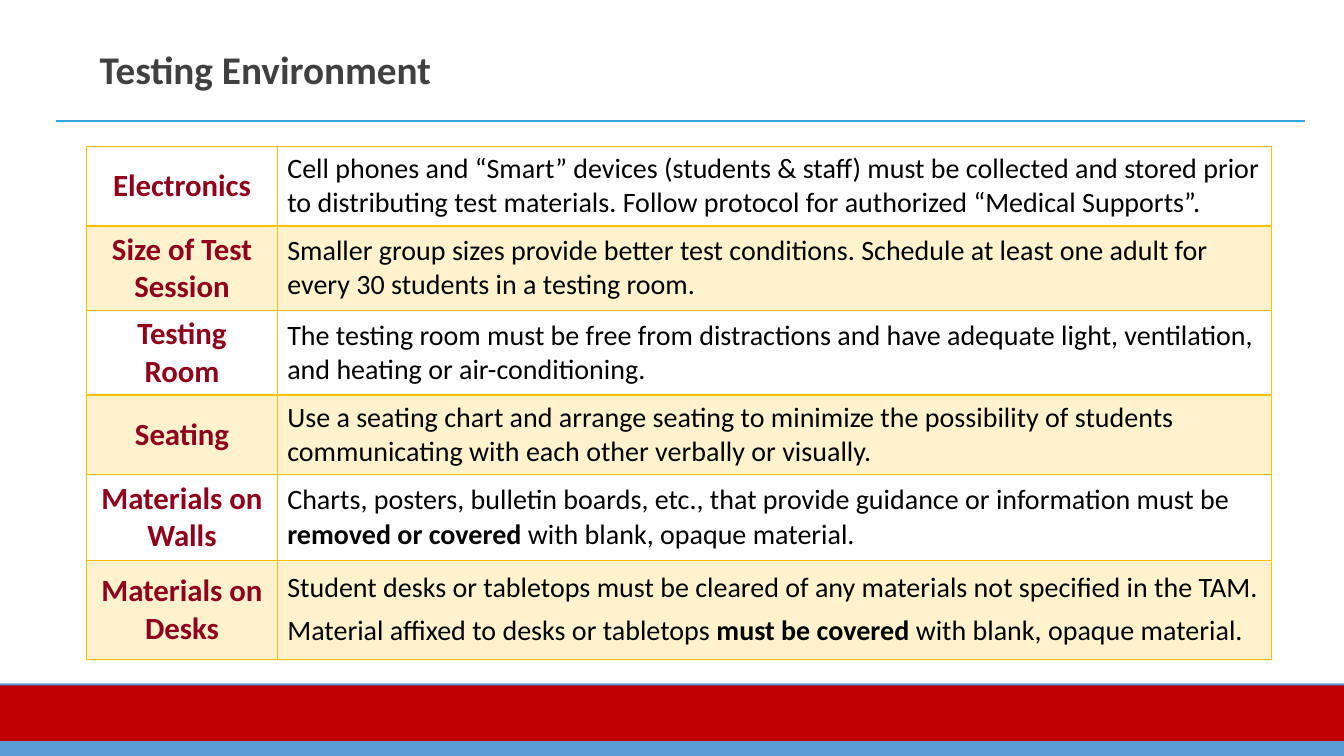
from lxml.etree import SubElement
from pptx import Presentation
from pptx.dml.color import RGBColor
from pptx.enum.shapes import MSO_CONNECTOR, MSO_SHAPE
from pptx.enum.text import MSO_ANCHOR as Anchor, PP_ALIGN as Align
from pptx.oxml.ns import qn
from pptx.util import Inches, Pt

GOLD = "FFC000"
GUIDELINES = [
    ("Electronics", 0.79, [
        "Cell phones and “Smart” devices (students & staff) must be collected and stored prior "
        "to distributing test materials. Follow protocol for authorized “Medical Supports”."]),
    ("Size of Test Session", 0.84, [
        "Smaller group sizes provide better test conditions. Schedule at least one adult for "
        "every 30 students in a testing room."]),
    ("Testing Room", 0.84, [
        "The testing room must be free from distractions and have adequate light, ventilation, "
        "and heating or air-conditioning."]),
    ("Seating", 0.79, [
        "Use a seating chart and arrange seating to minimize the possibility of students "
        "communicating with each other verbally or visually."]),
    ("Materials on Walls", 0.85, [
        "Charts, posters, bulletin boards, etc., that provide guidance or information must be "
        "**removed or covered **with blank, opaque material."]),
    ("Materials on Desks", 0.98, [
        "Student desks or tabletops must be cleared of any materials not specified in the TAM.",
        "Material affixed to desks or tabletops **must be covered **with blank, opaque material."]),
]


def rgb(value):
    """Turn a hex string into a colour."""
    return RGBColor.from_string(value)


def add_run(paragraph, text, size, color, bold):
    """Append one formatted run to a paragraph."""
    run = paragraph.add_run()
    run.text = text
    run.font.name = "Calibri"
    run.font.size = Pt(size)
    run.font.bold = bold
    run.font.color.rgb = rgb(color)


def add_band(slide, left, top, width, height, color):
    """Draw a flat borderless rectangle."""
    band = slide.shapes.add_shape(
        MSO_SHAPE.RECTANGLE, Inches(left), Inches(top), Inches(width), Inches(height))
    band.shadow.inherit = False
    band.fill.solid()
    band.fill.fore_color.rgb = rgb(color)
    band.line.fill.background()


def add_footer(slide, left, top, width, height):
    """Draw the blue footer with the red band over it."""
    add_band(slide, left, top, width, height, "5B9BD5")
    add_band(slide, left, top + 0.02, width, 0.55, "C00000")


def add_header(slide, left, top, width, height):
    """Place the title and the rule along the bottom of the header."""
    bottom = Inches(top + height)
    rule = slide.shapes.add_connector(
        MSO_CONNECTOR.STRAIGHT, Inches(left), bottom, Inches(left + width), bottom)
    rule.line.color.rgb = rgb("37A7DF")
    rule.line.width = Pt(1.25)
    SubElement(rule.element.spPr, qn("a:effectLst"))
    title = slide.shapes.add_textbox(
        Inches(left + 0.33), Inches(top), Inches(width - 0.88), Inches(height)).text_frame
    title.word_wrap = True
    title.vertical_anchor = Anchor.MIDDLE
    title.paragraphs[0].line_spacing = 0.9
    add_run(title.paragraphs[0], "Testing Environment", 28, "404040", True)


def style_cell(cell, row):
    """Give a cell its gold borders and, on every second row, a pale tint."""
    properties = cell._tc.get_or_add_tcPr()
    heavy = {0: "lnB", 1: "lnT"}.get(row)
    for side in ("lnL", "lnR", "lnT", "lnB"):
        border = SubElement(properties, qn(f"a:{side}"), w=str(Pt(2 if side == heavy else 1)))
        SubElement(SubElement(border, qn("a:solidFill")), qn("a:srgbClr"), val=GOLD)
    cell.vertical_anchor = Anchor.MIDDLE
    if row % 2:
        cell.fill.solid()
        cell.fill.fore_color.rgb = rgb(GOLD)
        tint = properties.find(qn("a:solidFill")).find(qn("a:srgbClr"))
        SubElement(tint, qn("a:alpha"), val="20000")
    else:
        cell.fill.background()


def add_guidelines(slide, left, top, width):
    """Build the table of topics and rules."""
    height = sum(row_height for _, row_height, _ in GUIDELINES)
    table = slide.shapes.add_table(
        len(GUIDELINES), 2, Inches(left), Inches(top), Inches(width), Inches(height)).table
    table.first_row = table.horz_banding = False
    topic_width = 1.89
    table.columns[0].width = Inches(topic_width)
    table.columns[1].width = Inches(width - topic_width)
    for row, (topic, row_height, rules) in enumerate(GUIDELINES):
        table.rows[row].height = Inches(row_height)
        topic_cell, rule_cell = table.cell(row, 0), table.cell(row, 1)
        style_cell(topic_cell, row)
        style_cell(rule_cell, row)
        heading = topic_cell.text_frame.paragraphs[0]
        heading.alignment = Align.CENTER
        heading.space_before = heading.space_after = Pt(6)
        add_run(heading, topic, 22, "8E001B", True)
        for index, rule in enumerate(rules):
            frame = rule_cell.text_frame
            paragraph = frame.add_paragraph() if index else frame.paragraphs[0]
            paragraph.space_after = Pt(6)
            for part, text in enumerate(rule.split("**")):
                add_run(paragraph, text, 20, "000000", part % 2 == 1)


def main():
    """Build and save the slide."""
    deck = Presentation()
    deck.slide_width, deck.slide_height = Inches(13.33), Inches(7.5)
    slide = deck.slides.add_slide(deck.slide_layouts[6])
    add_footer(slide, 0, 6.78, 13.33, 0.72)
    add_header(slide, 0.56, 0.22, 12.38, 0.98)
    add_guidelines(slide, 0.86, 1.45, 11.75)
    deck.save("out.pptx")


if __name__ == "__main__":
    main()
